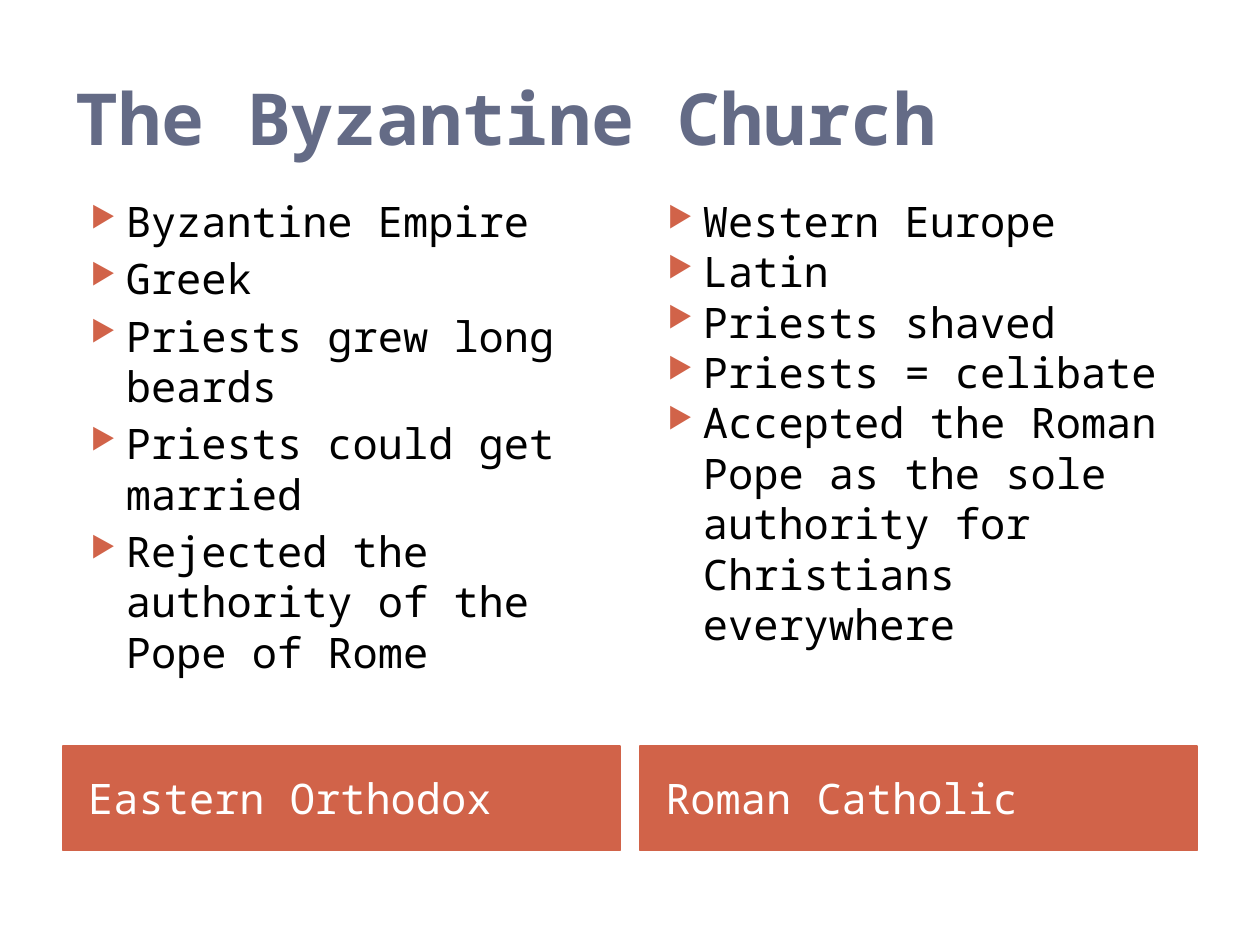
from pptx import Presentation
from pptx.dml.color import RGBColor
from pptx.enum.shapes import MSO_SHAPE
from pptx.enum.text import MSO_ANCHOR, PP_ALIGN
from pptx.oxml.xmlchemy import OxmlElement
from pptx.util import Inches, Pt

RECTANGLE = MSO_SHAPE.RECTANGLE
TOP, MIDDLE = MSO_ANCHOR.TOP, MSO_ANCHOR.MIDDLE
LEFT = PP_ALIGN.LEFT

FONT = "Noto Sans Mono"
SLATE, RUST, WHITE, BLACK = "646B86", "D16349", "FFFFFF", "000000"

MARGIN, COLUMN_WIDTH, COLUMN_STEP = 0.5, 4.42, 4.58
COLUMNS = [
    ("Eastern Orthodox", 4, [
        "Byzantine Empire",
        "Greek",
        "Priests grew long beards",
        "Priests could get married",
        "Rejected the authority of the Pope of Rome",
    ]),
    ("Roman Catholic", 0, [
        "Western Europe",
        "Latin",
        "Priests shaved",
        "Priests = celibate",
        "Accepted the Roman Pope as the sole authority for Christians everywhere",
    ]),
]


def color(value):
    return RGBColor.from_string(value)


class SlideBuilder:
    def __init__(self, page):
        self.page = page

    def add_span(self, para, text, size, ink, bold=False):
        span = para.add_run()
        span.text = text
        for name, value in {"name": FONT, "size": Pt(size), "bold": bold}.items():
            setattr(span.font, name, value)
        span.font.color.rgb = color(ink)

    def text_box(self, bounds, anchor):
        box = self.page.shapes.add_textbox(*map(Inches, bounds))
        box.text_frame.word_wrap = True
        box.text_frame.vertical_anchor = anchor
        return box.text_frame

    def title(self, text, bounds):
        frame = self.text_box(bounds, MIDDLE)
        self.add_span(frame.paragraphs[0], text, 41, SLATE, bold=True)

    def bullet(self, para):
        """Add a small coloured triangle with a hanging indent."""
        properties = para._p.get_or_add_pPr()
        properties.set("marL", str(Inches(0.4)))
        properties.set("indent", str(Inches(-0.28)))
        bullet_color = OxmlElement("a:buClr")
        swatch = OxmlElement("a:srgbClr")
        swatch.set("val", RUST)
        bullet_color.append(swatch)
        size = OxmlElement("a:buSzPct")
        size.set("val", "68000")
        mark = OxmlElement("a:buChar")
        mark.set("char", "▶")
        for element in (bullet_color, size, mark):
            properties.append(element)

    def bullet_list(self, items, bounds, gap):
        frame = self.text_box(bounds, TOP)
        for index, item in enumerate(items):
            para = frame.add_paragraph() if index else frame.paragraphs[0]
            self.bullet(para)
            para.space_before = Pt(gap if index else 0)
            self.add_span(para, item, 24, BLACK)

    def banner(self, text, bounds):
        shape = self.page.shapes.add_shape(RECTANGLE, *map(Inches, bounds))
        shape.shadow.inherit = False
        shape.fill.solid()
        shape.fill.fore_color.rgb = color(RUST)
        shape.line.color.rgb = color(RUST)
        shape.line.width = Pt(0.75)
        frame = shape.text_frame
        settings = {"word_wrap": True, "vertical_anchor": MIDDLE,
                    "margin_left": Inches(0.2), "margin_right": Inches(0.1)}
        for name, value in settings.items():
            setattr(frame, name, value)
        para = frame.paragraphs[0]
        para.alignment = LEFT
        self.add_span(para, text, 24, WHITE)


def main():
    deck = Presentation()
    deck.slide_width, deck.slide_height = Inches(10), Inches(7.5)
    builder = SlideBuilder(deck.slides.add_slide(deck.slide_layouts[6]))
    builder.title("The Byzantine Church", (MARGIN, 0.3, 9, 1.25))
    for index, (heading, gap, items) in enumerate(COLUMNS):
        left = MARGIN + index * COLUMN_STEP
        builder.banner(heading, (left, 5.92, COLUMN_WIDTH, 0.83))
        builder.bullet_list(items, (left, 1.5, COLUMN_WIDTH, 4.39), gap)
    deck.save("out.pptx")


if __name__ == "__main__":
    main()
